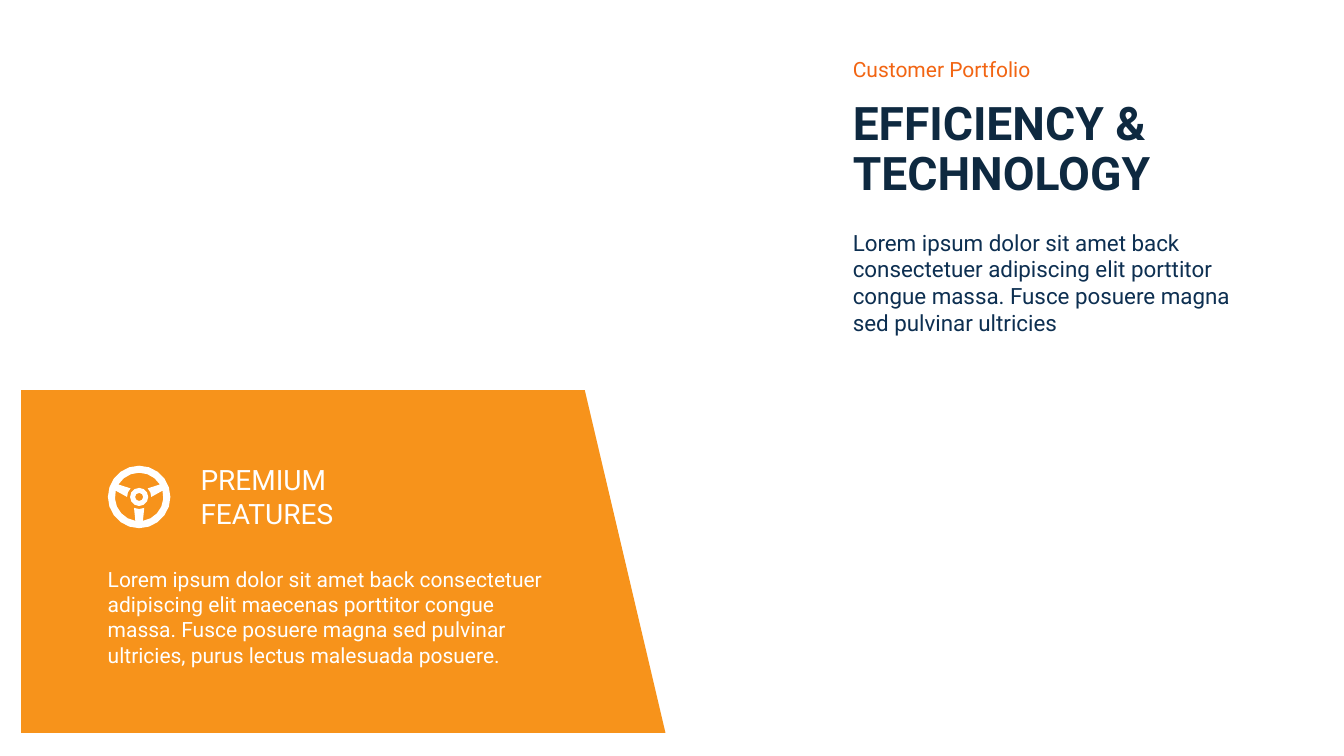
from math import cos, radians, sin

from pptx import Presentation
from pptx.dml.color import RGBColor
from pptx.enum.text import MSO_AUTO_SIZE
from pptx.util import Inches, Pt

WHITE = RGBColor(0xFF, 0xFF, 0xFF)
AMBER = RGBColor(0xF7, 0x93, 0x1B)
ORANGE = RGBColor(0xF2, 0x65, 0x13)
NAVY = RGBColor(0x0E, 0x29, 0x40)
BLUE = RGBColor(0x0D, 0x2F, 0x51)

HUB = (1.38, 4.93)  # centre of the wheel


def arc(radius, start, end, steps):
    """Points along an arc around the hub, clockwise in degrees."""
    turns = [radians(start + (end - start) * i / steps) for i in range(steps + 1)]
    return [(HUB[0] + radius * cos(t), HUB[1] + radius * sin(t)) for t in turns]


def outline(loops, color):
    """One filled freeform made of closed loops; inner loops are holes."""
    loops = [[(Inches(x), Inches(y)) for x, y in loop] for loop in loops]
    form = slide.shapes.build_freeform(*loops[0][0])
    form.add_line_segments(loops[0][1:])
    for loop in loops[1:]:
        form.move_to(*loop[0])
        form.add_line_segments(loop[1:])
    shape = form.convert_to_shape()
    shape.shadow.inherit = False
    shape.fill.solid()
    shape.fill.fore_color.rgb = color
    shape.line.fill.background()


prs = Presentation()
prs.slide_width, prs.slide_height = Inches(13.33), Inches(7.5)
slide = prs.slides.add_slide(prs.slide_layouts[6])

# Slanted panel
outline([[(0.21, 3.87), (5.8, 3.87), (6.6, 7.27), (0.21, 7.27)]], AMBER)

# Texts: place, wording, line spacing, font, colour
texts = [
    ((8.36, 0.95, 4.34, 1.1), "EFFICIENCY & TECHNOLOGY", 0.9,
     {"size": Pt(33), "bold": True}, NAVY),
    ((8.36, 0.51, 2.15, 0.35), "Customer Portfolio", None,
     {"size": Pt(15)}, ORANGE),
    ((8.36, 2.22, 4.34, 1.18),
     "Lorem ipsum dolor sit amet back consectetuer adipiscing elit porttitor "
     "congue massa. Fusce posuere magna sed pulvinar ultricies", None,
     {"size": Pt(16)}, BLUE),
    ((0.97, 5.57, 4.58, 1.11),
     "Lorem ipsum dolor sit amet back consectetuer adipiscing elit maecenas "
     "porttitor congue massa. Fusce posuere magna sed pulvinar ultricies, "
     "purus lectus malesuada posuere.", None, {"size": Pt(15)}, WHITE),
    ((1.89, 4.54, 3.02, 0.77), "PREMIUM\vFEATURES", None,
     {"size": Pt(20)}, WHITE),
]
for place, words, spacing, style, color in texts:
    box = slide.shapes.add_textbox(*map(Inches, place))
    frame = box.text_frame
    frame.word_wrap = True
    frame.auto_size = MSO_AUTO_SIZE.SHAPE_TO_FIT_TEXT
    para = frame.paragraphs[0]
    para.text = words
    para.line_spacing = spacing
    for run in para.runs:
        for key, value in {"name": "Roboto", **style}.items():
            setattr(run.font, key, value)
        run.font.color.rgb = color

# Steering wheel: rim with three spokes, then the hub ring
inner, gap = 0.24, 0.12
opening = [
    (gap, 65, 115, 2), (inner, 99, 195, 5), (gap, 180, 225, 2),
    (inner, 211, 329, 6), (gap, 315, 360, 2), (inner, 345, 441, 5),
]
window = [point for part in opening for point in arc(*part)]
outline([arc(0.31, 0, 360, 20), window], WHITE)
outline([arc(0.09, 0, 360, 12), arc(0.04, 0, 360, 8)], WHITE)

prs.save("out.pptx")
